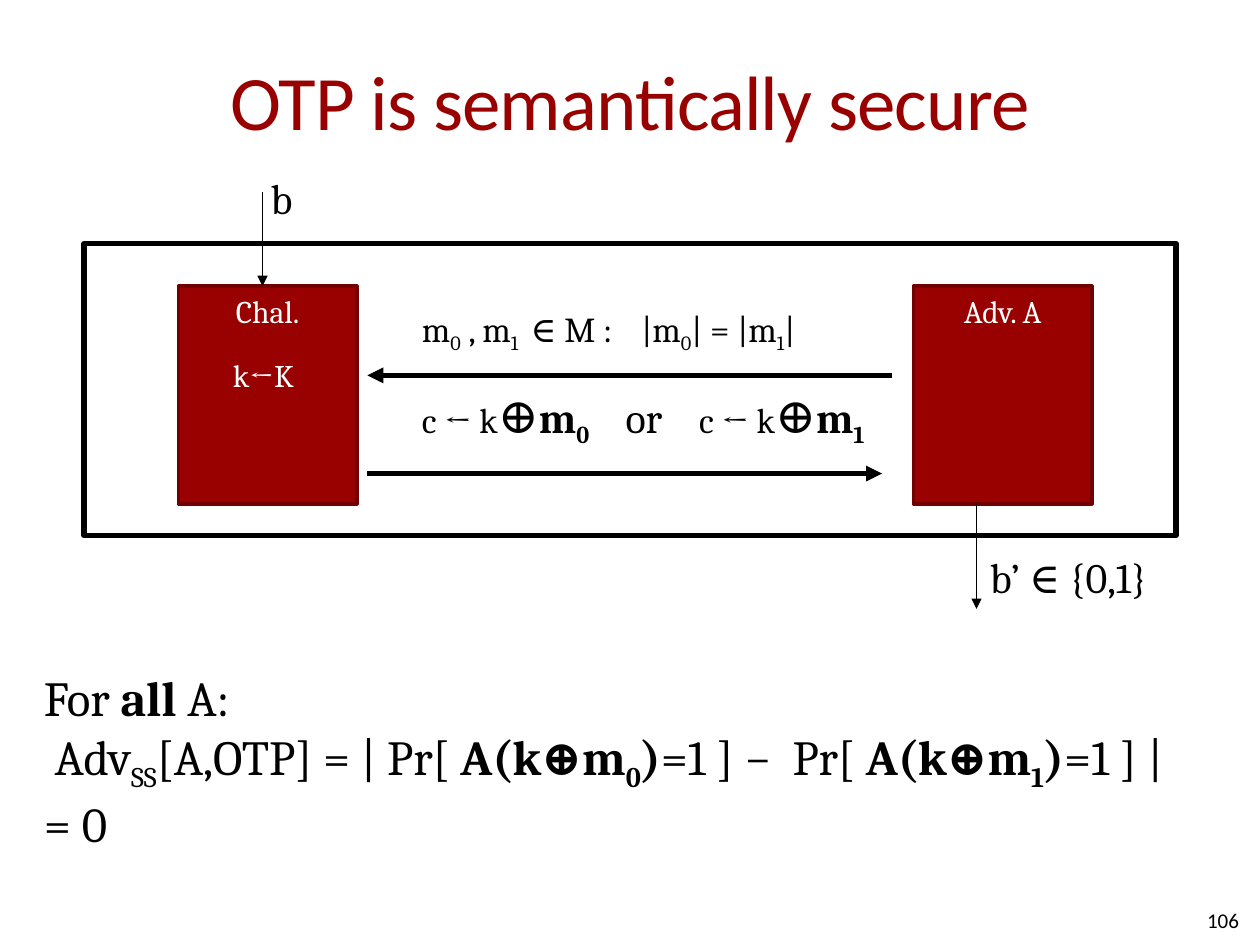
import pptx
import pptx.util
import pptx.dml.color
import pptx.enum.shapes
import pptx.enum.text
import pptx.oxml
import pptx.oxml.ns

Pt = pptx.util.Pt
ALIGN = pptx.enum.text.PP_ALIGN
ANCHOR = pptx.enum.text.MSO_ANCHOR
FIT = pptx.enum.text.MSO_AUTO_SIZE
RECTANGLE = pptx.enum.shapes.MSO_SHAPE.RECTANGLE
STRAIGHT = pptx.enum.shapes.MSO_CONNECTOR.STRAIGHT
RED, DARK_RED, BLACK, WHITE = "990000", "710000", "000000", "FFFFFF"
SUB, BOLD, BOLD_SUB = "s", "b", "bs"

deck = pptx.Presentation()
deck.slide_width, deck.slide_height = pptx.util.Inches(10), pptx.util.Inches(7.5)
page = deck.slides.add_slide(deck.slide_layouts[6])
UNIT = deck.slide_width / 120  # the grid has 120 columns and 90 rows


def colour(text):
    return pptx.dml.color.RGBColor.from_string(text)


def write(box, spans, size, ink=BLACK, font="Cambria", align=ALIGN.LEFT, tabs=(), **frame):
    """Fill a shape with spans of (text, style, own size); None is a line break."""
    for name, value in {"word_wrap": False, **frame}.items():
        setattr(box.text_frame, name, value)
    para = box.text_frame.paragraphs[0]
    para.alignment = align
    if tabs:
        stops = pptx.oxml.parse_xml(f'<a:tabLst {pptx.oxml.ns.nsdecls("a")}/>')
        for column in tabs:
            stop = pptx.oxml.parse_xml(f'<a:tab {pptx.oxml.ns.nsdecls("a")} algn="l"/>')
            stop.set("pos", str(round(column * UNIT)))
            stops.append(stop)
        para._p.get_or_add_pPr().append(stops)
    for item in spans:
        if item is None:
            para.add_line_break()
            continue
        text, style, own_size = (*item, "", None)[:3] if len(item) < 3 else item
        span = para.add_run()
        span.text = text
        look = {"name": font, "size": Pt(own_size or size), "bold": "b" in style}
        for name, value in look.items():
            setattr(span.font, name, value)
        span.font.color.rgb = colour(ink)
        if "s" in style:
            span.font._element.set("baseline", "-25000")
    return para


# Frame of the game and its two players: place, fill, line, line width, label
rectangles = [
    ((8, 23.2, 104, 27.8), None, BLACK, 3, None),
    ((17, 27.25, 17, 20.75), RED, DARK_RED, 2, "Chal."),
    ((87, 27.25, 17, 20.75), RED, DARK_RED, 2, "Adv. A"),
]
for place, fill, edge, width, label in rectangles:
    box = page.shapes.add_shape(RECTANGLE, *[round(n * UNIT) for n in place])
    box.shadow.inherit = False
    if fill:
        box.fill.solid()
        box.fill.fore_color.rgb = colour(fill)
    else:
        box.fill.background()
    box.line.color.rgb = colour(edge)
    box.line.width = Pt(width)
    if label:
        write(box, [(label,)], 18, WHITE, align=ALIGN.CENTER, vertical_anchor=ANCHOR.TOP)

# Arrows: input bit, messages, ciphertext, output bit
arrows = [
    ((25, 18.25, 25, 27.25), 0.75),
    ((85, 35.75, 35, 35.75), 3),
    ((35, 45.1, 84, 45.1), 3),
    ((93, 48, 93, 58), 0.75),
]
for ends, width in arrows:
    arrow = page.shapes.add_connector(STRAIGHT, *[round(n * UNIT) for n in ends])
    arrow.line.color.rgb = colour(BLACK)
    arrow.line.width = Pt(width)
    head = pptx.oxml.parse_xml(f'<a:tailEnd {pptx.oxml.ns.nsdecls("a")} type="triangle"/>')
    arrow.line._get_or_add_ln().append(head)
    plain = pptx.oxml.parse_xml(f'<a:effectLst {pptx.oxml.ns.nsdecls("a")}/>')
    arrow._element.spPr.append(plain)

messages = [("m",), ("0", SUB), (" , m",), ("1 ", SUB), (" ∈ M :\t|m",), ("0", SUB),
            ("| = |m",), ("1", SUB), ("|",)]
ciphertext = []
for bit, gap in (("0", "\tor\t"), ("1", "")):
    ciphertext += [("c ← k",), ("⊕", "", 28), ("m", BOLD, 24), (bit, BOLD_SUB, 24)]
    if gap:
        ciphertext.append((gap, "", 24))
advantage = [("For ",), ("all", BOLD), (" A:",), None, (" Adv",), ("SS", SUB), ("[A,OTP] = | ",)]
for bit, after in (("0", "=1 ] −\t"), ("1", "=1 ] |")):
    advantage += [("Pr[ ",), ("A(k⊕m", BOLD), (bit, BOLD_SUB), (")", BOLD), (after,)]
advantage += [None, ("= 0",)]

# Text: place, spans, size, further settings
texts = [
    ((24.6, 15.85, 4.7, 6), [("b",)], 24, {}),
    ((21, 33.35, 9, 4.8), [("k←K",)], 18, {"ink": WHITE}),
    ((39, 28.65, 39.8, 5.25), messages, 20, {"tabs": [20.9]}),
    ((39, 36, 49.2, 6.8), ciphertext, 20, {"tabs": [19.4, 26.4]}),
    ((93.1, 51.9, 18.6, 6.1), [("b’ ∈ {0,1}",)], 24, {}),
    ((3, 63, 117, 18.1), advantage, 28, {"tabs": [71.3], "word_wrap": True}),
]
for place, spans, size, settings in texts:
    box = page.shapes.add_textbox(*[round(n * UNIT) for n in place])
    write(box, spans, size, auto_size=FIT.SHAPE_TO_FIT_TEXT, **settings)

middle = {"font": "Calibri", "word_wrap": True, "vertical_anchor": ANCHOR.MIDDLE,
          "margin_left": 0, "margin_right": 0}
title = page.shapes.add_textbox(*[round(n * UNIT) for n in (6, 2, 108, 15)])
heading = write(title, [("OTP is semantically secure",)], 44, RED, align=ALIGN.CENTER, **middle)
heading.runs[0].font._element.set("spc", "-50")
number = page.shapes.add_textbox(*[round(n * UNIT) for n in (90, 85.2, 28, 4.8)])
write(number, [("106",)], 12, align=ALIGN.RIGHT, margin_top=0, margin_bottom=0, **middle)

deck.save("out.pptx")
